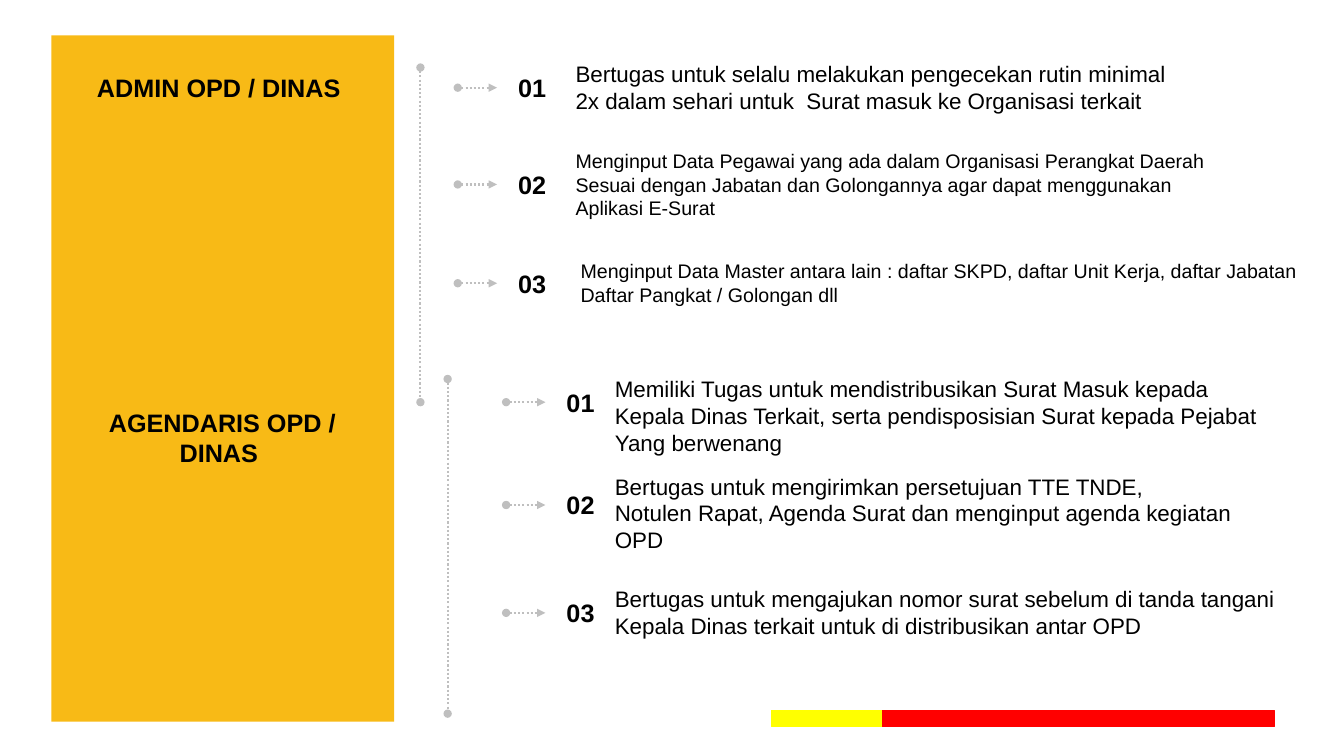
import pptx
import pptx.dml.color
import pptx.enum.dml
import pptx.enum.shapes
import pptx.enum.text
import pptx.oxml.xmlchemy
import pptx.util

Inches = pptx.util.Inches
ALIGN = pptx.enum.text.PP_ALIGN
THEME = {
    "panel": "F8BA16", "line": "BFBFBF", "text": "000000",
    "yellow": "FFFF00", "red": "FF0000", "font": "Arial",
    "heading": 18, "body": 16, "small": 14, "rule": 1.5, "border": 1,
}
FRAME = {
    "auto_size": pptx.enum.text.MSO_AUTO_SIZE.NONE,
    "vertical_anchor": pptx.enum.text.MSO_ANCHOR.TOP,
    "margin_left": Inches(0.1), "margin_right": Inches(0.1),
    "margin_top": Inches(0.05), "margin_bottom": Inches(0.05),
}
ADMIN = [
    (0.87, (5.61, 0.55, 6.19, 0.64), "body", [
        "Bertugas untuk selalu melakukan pengecekan rutin minimal ",
        "2x dalam sehari untuk  Surat masuk ke Organisasi terkait"]),
    (1.83, (5.61, 1.43, 6.62, 0.81), "small", [
        "Menginput Data Pegawai yang ada dalam Organisasi Perangkat Daerah",
        "Sesuai dengan Jabatan dan Golongannya agar dapat menggunakan ",
        "Aplikasi E-Surat"]),
    (2.81, (5.66, 2.52, 7.34, 0.57), "small", [
        "Menginput Data Master antara lain : daftar SKPD, daftar Unit Kerja, daftar Jabatan",
        "Daftar Pangkat / Golongan dll "]),
]
AGENDARIS = [
    (3.99, (6, 3.67, 6.64, 0.91), "body", [
        "Memiliki Tugas untuk mendistribusikan Surat Masuk kepada ",
        "Kepala Dinas Terkait, serta pendisposisian Surat kepada Pejabat",
        "Yang berwenang"]),
    (5.01, (6, 4.64, 6.38, 0.91), "body", [
        "Bertugas untuk mengirimkan persetujuan TTE TNDE, ",
        "Notulen Rapat, Agenda Surat dan menginput agenda kegiatan",
        "OPD "]),
    (6.08, (6, 5.76, 6.83, 0.64), "body", [
        "Bertugas untuk mengajukan nomor surat sebelum di tanda tangani",
        "Kepala Dinas terkait untuk di distribusikan antar OPD"]),
]


def rgb(name):
    """Return a theme colour."""
    return pptx.dml.color.RGBColor.from_string(THEME[name])


def set_attrs(obj, values):
    """Set every attribute in a dict of format values."""
    for name, value in values.items():
        setattr(obj, name, value)


def write(sp, box, lines, size, align, bold=False, wrap=False):
    """Place a text shape in its box and write one paragraph per line."""
    set_attrs(sp, dict(zip(("left", "top", "width", "height"), map(Inches, box))))
    tf = sp.text_frame
    set_attrs(tf, {**FRAME, "word_wrap": wrap})
    for i, line in enumerate(lines):
        p = tf.add_paragraph() if i else tf.paragraphs[0]
        p.alignment = align
        r = p.add_run()
        r.text = line
        set_attrs(r.font, {"name": THEME["font"], "bold": bold,
                           "size": pptx.util.Pt(THEME[size])})
        r.font.color.rgb = rgb("text")


def add_text(s, box, *args, **kwargs):
    """Add a text box."""
    write(s.shapes.add_textbox(0, 0, 0, 0), box, *args, **kwargs)


def add_bar(s, box, fill, border=False):
    """Add a filled rectangle, with a line of the same colour if asked."""
    sp = s.shapes.add_shape(pptx.enum.shapes.MSO_SHAPE.RECTANGLE, *map(Inches, box))
    sp.shadow.inherit = False
    sp.fill.solid()
    sp.fill.fore_color.rgb = rgb(fill)
    if border:
        sp.line.color.rgb = rgb(fill)
        sp.line.width = pptx.util.Pt(THEME["border"])
    else:
        sp.line.fill.background()


def add_dotted(s, x1, y1, x2, y2, tail):
    """Add a dotted line that starts with a dot and ends with the given tail."""
    cx = s.shapes.add_connector(pptx.enum.shapes.MSO_CONNECTOR.STRAIGHT,
                                *map(Inches, (x1, y1, x2, y2)))
    cx.line.color.rgb = rgb("line")
    cx.line.width = pptx.util.Pt(THEME["rule"])
    cx.line.dash_style = pptx.enum.dml.MSO_LINE.ROUND_DOT
    ln = cx.line._get_or_add_ln()
    for tag, kind in (("a:headEnd", "oval"), ("a:tailEnd", tail)):
        end = pptx.oxml.xmlchemy.OxmlElement(tag)
        end.set("type", kind)
        ln.append(end)
    cx._element.spPr.append(pptx.oxml.xmlchemy.OxmlElement("a:effectLst"))


def add_panel(s, box):
    """Add the coloured panel with the two role headings."""
    x, y, w, h = box
    add_bar(s, box, "panel")
    sp = s.shapes.title
    s.shapes._spTree.append(sp._element)
    fmt = {"size": "heading", "align": ALIGN.CENTER, "bold": True, "wrap": True}
    left, width = x + 0.25, w - 0.51
    write(sp, (left, y + 0.32, width, 0.4), ["ADMIN OPD / DINAS "], **fmt)
    add_text(s, (left, y + 3.64, width, 0.71), ["AGENDARIS OPD / DINAS "], **fmt)


def add_duties(s, box, indent, duties):
    """Add a vertical dotted rule and the numbered duties beside it."""
    x, y, w, h = box
    add_dotted(s, x, y, x, y + h, "oval")
    left = x + indent
    for n, (mid, text_box, size, lines) in enumerate(duties, 1):
        add_dotted(s, left, mid, left + 0.39, mid, "triangle")
        add_text(s, (left + 0.5, mid - 0.2, 0.48, 0.4), [f"{n:02}"],
                 "heading", ALIGN.LEFT, bold=True)
        add_text(s, text_box, lines, size, ALIGN.JUSTIFY)


def add_footer(s, box):
    """Add the yellow and red bars at the foot."""
    x, y, w, h = box
    add_bar(s, (x, y, 1.17, h), "yellow", border=True)
    add_bar(s, (x + 1.1, y, w - 1.1, h), "red", border=True)


def main():
    """Build the slide and save it."""
    prs = pptx.Presentation()
    set_attrs(prs, {"slide_width": Inches(13.33), "slide_height": Inches(7.5)})
    s = prs.slides.add_slide(prs.slide_layouts.get_by_name("Title Only"))
    add_panel(s, (0.51, 0.35, 3.4, 6.81))
    add_duties(s, (4.17, 0.67, 0, 3.32), 0.37, ADMIN)
    add_duties(s, (4.44, 3.76, 0, 3.32), 0.58, AGENDARIS)
    add_footer(s, (7.65, 7.05, 4.99, 0.16))
    prs.save("out.pptx")


if __name__ == "__main__":
    main()
